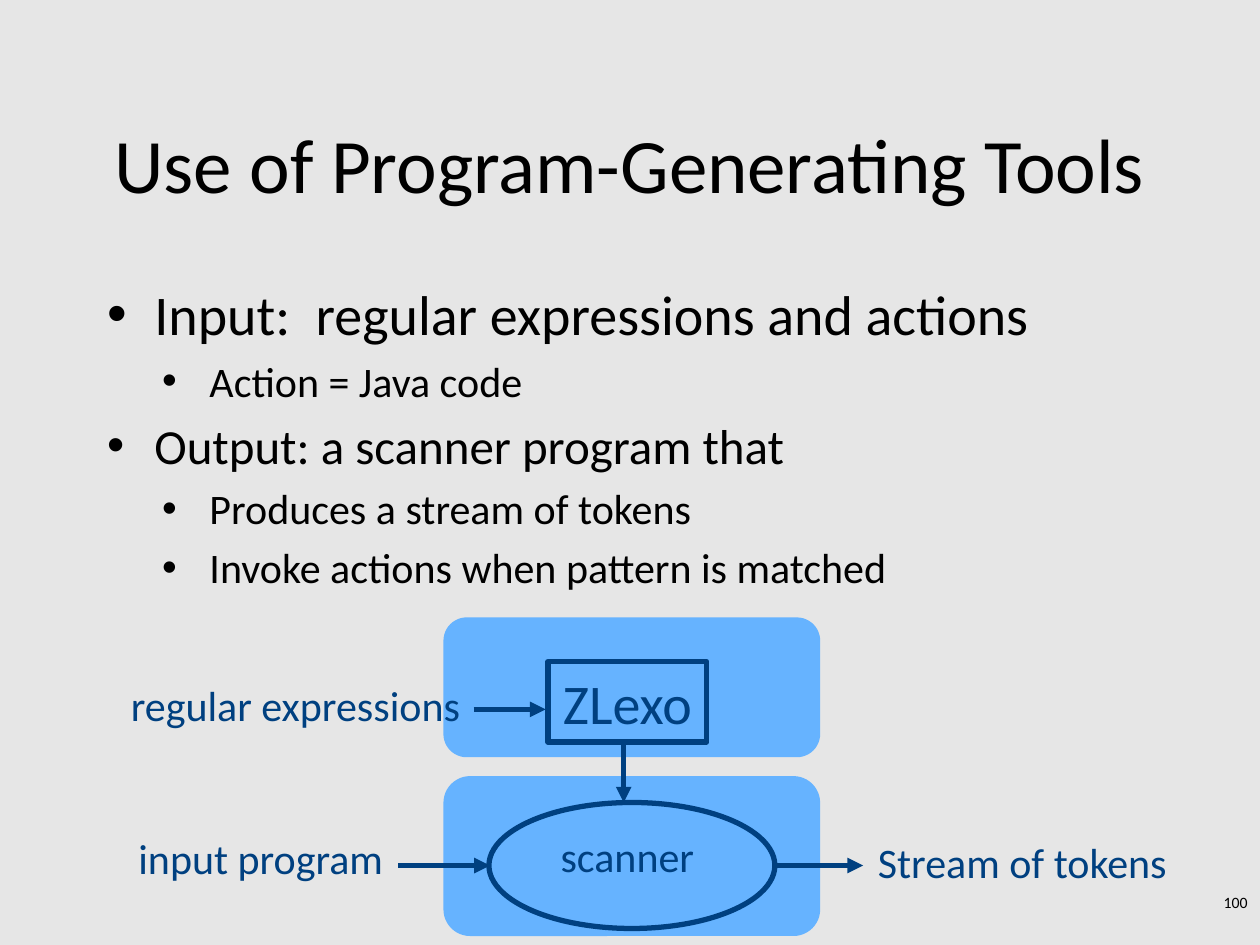
from pptx import Presentation
from pptx.dml.color import RGBColor
from pptx.enum.shapes import MSO_CONNECTOR, MSO_SHAPE as SHAPE
from pptx.enum.text import MSO_ANCHOR as ANCHOR, MSO_AUTO_SIZE, PP_ALIGN as ALIGN
from pptx.oxml.ns import qn
from pptx.util import Pt
from lxml.etree import SubElement

FONT = "Calibri"
BLACK = RGBColor(0x00, 0x00, 0x00)
NAVY = RGBColor(0x00, 0x40, 0x80)
SKY = RGBColor(0x66, 0xB3, 0xFF)
GRAY = RGBColor(0xE6, 0xE6, 0xE6)

# Content: lengths in points, boxes as left, top, width, height
TITLE = "Use of Program-Generating Tools"
BULLETS = [  # level, size, text
    (0, 32, "Input:  regular expressions and actions"),
    (1, 24, "Action = Java code"),
    (0, 28, "Output: a scanner program that"),
    (1, 24, "Produces a stream of tokens"),
    (1, 24, "Invoke actions when pattern is matched"),
]
INDENTS = [27, 58.5]
HANGING = 27
PANELS = [(253.4, 443.5, 215.3, 91.4), (253.4, 352.8, 215.3, 79.9)]
OUTLINES = [
    (SHAPE.RECTANGLE, (313.2, 378, 90.7, 46)),
    (SHAPE.OVAL, (279.4, 458.6, 163.4, 72)),
]
LABELS = [  # text, box, size, alignment
    ("Stream of tokens", (494.6, 474.5, 196.6, 36), 24, ALIGN.LEFT),
    ("ZLexo", (313.2, 378, 90.7, 46), 32, ALIGN.CENTER),
    ("regular expressions", (67.7, 384.5, 212.4, 36), 24, ALIGN.LEFT),
    ("input program", (72, 472.3, 156.2, 36), 24, ALIGN.LEFT),
    ("scanner", (271.4, 470.9, 174.2, 36), 24, ALIGN.CENTER),
]
ARROWS = [  # from x, y, to x, y
    (270.7, 405.4, 311.8, 405.4),
    (227.5, 494.6, 280, 494.6),
    (356.4, 424.8, 356.4, 458.6),
    (441.4, 494.6, 493.2, 494.6),
]
PAGE_NUMBER = ("100", (570.2, 506.9, 149.8, 21.6), 9, ALIGN.RIGHT)


def points(values):
    return [Pt(v) for v in values]


def place(sp, box):
    sp.left, sp.top, sp.width, sp.height = points(box)


def style(p, size, color):
    for r in p.runs:
        r.font.name, r.font.size = FONT, Pt(size)
        r.font.color.rgb = color


def add_label(s, text, box, size, align, color=NAVY, anchor=ANCHOR.MIDDLE):
    tf = s.shapes.add_textbox(*points(box)).text_frame
    tf.word_wrap = True
    tf.vertical_anchor = anchor
    tf.text = text
    p = tf.paragraphs[0]
    p.alignment = align
    style(p, size, color)


def add_shape(s, kind, box):
    sp = s.shapes.add_shape(kind, *points(box))
    sp.shadow.inherit = False
    return sp


def add_arrow(s, ends):
    line = s.shapes.add_connector(MSO_CONNECTOR.STRAIGHT, *points(ends))
    line.line.color.rgb, line.line.width = NAVY, Pt(3)
    SubElement(line.line._get_or_add_ln(), qn("a:tailEnd"), type="triangle")
    SubElement(line._element.spPr, qn("a:effectLst"))


def add_bullet(p, level):
    p.level = level
    pPr = p._p.get_or_add_pPr()
    pPr.set("marL", str(Pt(INDENTS[level])))
    pPr.set("indent", str(-Pt(HANGING)))
    SubElement(pPr, qn("a:buFont"), typeface="Arial")
    SubElement(pPr, qn("a:buChar"), char="•")


def main():
    prs = Presentation()
    prs.slide_width, prs.slide_height = Pt(720), Pt(540)
    s = prs.slides.add_slide(prs.slide_layouts[1])
    s.background.fill.solid()
    s.background.fill.fore_color.rgb = GRAY

    # Title
    title = s.shapes.title
    place(title, (54, 48.2, 612, 90))
    tf = title.text_frame
    tf.text = TITLE
    tf.vertical_anchor = ANCHOR.MIDDLE
    style(tf.paragraphs[0], 44, BLACK)

    # Bullet list
    body = s.placeholders[1]
    place(body, (54, 156.2, 641.5, 324))
    tf = body.text_frame
    tf.text = "\n".join(text for _, _, text in BULLETS)
    tf.auto_size = MSO_AUTO_SIZE.NONE
    for p, (level, size, _) in zip(tf.paragraphs, BULLETS):
        add_bullet(p, level)
        style(p, size, BLACK)

    # Diagram
    for box in PANELS:
        panel = add_shape(s, SHAPE.ROUNDED_RECTANGLE, box)
        panel.fill.solid()
        panel.fill.fore_color.rgb = SKY
        panel.line.fill.background()
    for kind, box in OUTLINES:
        outline = add_shape(s, kind, box)
        outline.fill.background()
        outline.line.color.rgb, outline.line.width = NAVY, Pt(3)
    for label in LABELS:
        add_label(s, *label)
    for ends in ARROWS:
        add_arrow(s, ends)

    # Page number
    add_label(s, *PAGE_NUMBER, color=BLACK, anchor=ANCHOR.TOP)
    prs.save("out.pptx")


if __name__ == "__main__":
    main()
